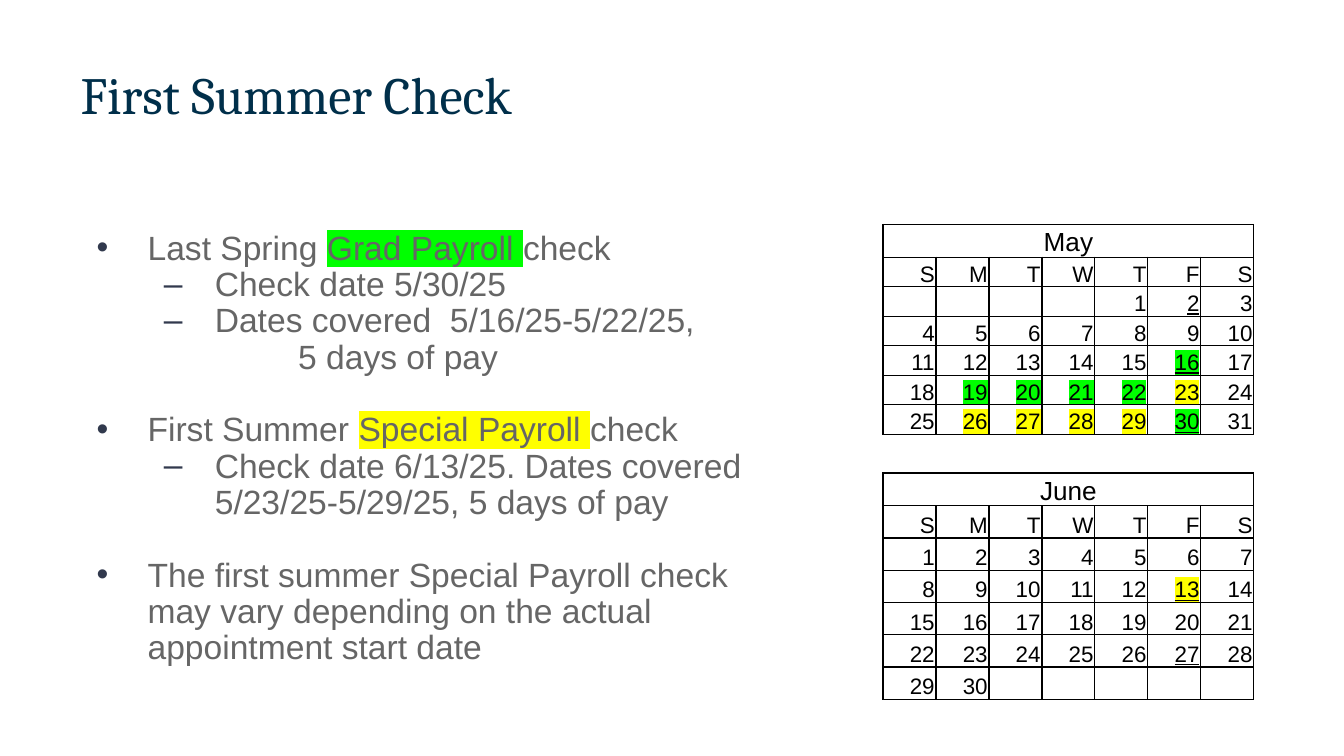
import pptx
import pptx.util
import pptx.dml.color
import pptx.enum.text
import pptx.oxml
import pptx.oxml.ns
from lxml import etree

Inches, Pt = pptx.util.Inches, pptx.util.Pt
RGB = pptx.dml.color.RGBColor
ALIGN = pptx.enum.text.PP_ALIGN
ANCHOR = pptx.enum.text.MSO_ANCHOR

NAVY = RGB(0x00, 0x2F, 0x4A)
SLATE = RGB(0x31, 0x39, 0x4D)
GRAY = RGB(0x66, 0x66, 0x66)
BLACK = RGB(0, 0, 0)
GREEN = RGB(0, 0xFF, 0)
YELLOW = RGB(0xFF, 0xFF, 0)

TITLE = "First Summer Check"

# Level, space before in points, runs of (text, highlight)
POINTS = [
    ("top", 4, [("Last Spring ", None), ("Grad Payroll ", GREEN), ("check", None)]),
    ("sub", 0, [("Check date 5/30/25", None)]),
    ("sub", 0, [("Dates covered  5/16/25-5/22/25,", None)]),
    ("more", 0, [("5 days of pay", None)]),
    ("top", 19.5, [("First Summer ", None), ("Special Payroll ", YELLOW), ("check", None)]),
    ("sub", 0, [("Check date 6/13/25. Dates covered 5/23/25-5/29/25, 5 days of pay", None)]),
    ("top", 19.5, [("The first summer Special Payroll check may vary depending on "
                    "the actual appointment start date", None)]),
]
# Left margin, hanging indent, bullet
LEVELS = {"top": (0.5, -0.38, "•"), "sub": (1, -0.38, "–"), "more": (1.62, 0, None)}

DAYS = "SMTWTFS"
MONTHS = [
    {"name": "May", "start": 4, "days": 31, "top": 1.67, "row": 0.22,
     "marks": {16: GREEN, 19: GREEN, 20: GREEN, 21: GREEN, 22: GREEN, 30: GREEN,
               23: YELLOW, 26: YELLOW, 27: YELLOW, 28: YELLOW, 29: YELLOW},
     "lines": {2, 16, 30}},
    {"name": "June", "start": 0, "days": 30, "top": 3.52, "row": 0.24,
     "marks": {13: YELLOW}, "lines": {13, 27}},
]
WEEKS = 5
LEFT, WIDTH = 6.57, 2.76


def add(parent, tag, **attrs):
    return etree.SubElement(parent, pptx.oxml.ns.qn(tag), **attrs)


def write(para, text, size=12, color=BLACK, face="Arial", mark=None, line=False):
    run = para.add_run()
    run.text = text
    font = run.font
    font.size = Pt(size)
    font.color.rgb = color
    if mark is not None:
        add(add(run._r.get_or_add_rPr(), "a:highlight"), "a:srgbClr", val=str(mark))
    font.name = face
    if line:
        font.underline = True


def indent(para, left, hang, bullet):
    props = para._p.get_or_add_pPr()
    props.set("marL", str(Inches(left)))
    props.set("indent", str(Inches(hang)))
    if bullet:
        add(add(props, "a:buClr"), "a:srgbClr", val=str(SLATE))
        add(props, "a:buFont", typeface="Arial")
        add(props, "a:buChar", char=bullet)


def style(cell):
    """Set thin black borders, no fill and tight margins."""
    props = cell._tc.get_or_add_tcPr()
    for side in ("a:lnL", "a:lnR", "a:lnT", "a:lnB"):
        edge = add(props, side, w=str(Pt(0.75)))
        add(add(edge, "a:solidFill"), "a:srgbClr", val=str(BLACK))
    cell.fill.background()
    cell.margin_left = cell.margin_right = cell.margin_top = Inches(0.01)
    cell.margin_bottom = 0
    cell.vertical_anchor = ANCHOR.BOTTOM


def draw_month(slide, month):
    cols, rows = len(DAYS), WEEKS + 2
    frame = slide.shapes.add_table(rows, cols, Inches(LEFT), Inches(month["top"]),
                                   Inches(WIDTH), Inches(month["row"] * rows))
    table = frame.table
    table.first_row = table.horz_banding = False
    for row in table.rows:
        row.height = Inches(month["row"])
        for cell in row.cells:
            style(cell)
            end = cell.text_frame.paragraphs[0]._p.get_or_add_endParaRPr()
            end.set("sz", "1200")

    head = table.cell(0, 0)
    head.merge(table.cell(0, cols - 1))
    para = head.text_frame.paragraphs[0]
    para.alignment = ALIGN.CENTER
    write(para, month["name"], size=14)

    for col, name in enumerate(DAYS):
        para = table.cell(1, col).text_frame.paragraphs[0]
        para.alignment = ALIGN.RIGHT
        write(para, name)
    for day in range(1, month["days"] + 1):
        week, col = divmod(month["start"] + day - 1, cols)
        para = table.cell(week + 2, col).text_frame.paragraphs[0]
        para.alignment = ALIGN.RIGHT
        write(para, str(day), mark=month["marks"].get(day), line=day in month["lines"])


def main():
    deck = pptx.Presentation()
    deck.slide_width = Inches(10)
    deck.slide_height = deck.slide_width * 9 // 16
    slide = deck.slides.add_slide(deck.slide_layouts[5])

    title = slide.shapes.title
    title.left, title.top = Inches(0.5), Inches(0.23)
    title.width, title.height = Inches(9), Inches(0.94)
    title.text_frame.vertical_anchor = ANCHOR.MIDDLE
    para = title.text_frame.paragraphs[0]
    para.alignment = ALIGN.LEFT
    write(para, TITLE, size=28, color=NAVY, face="Cambria")

    body = slide.shapes.add_textbox(Inches(0.5), Inches(1.67), Inches(5.31), Inches(3.72))
    text = body.text_frame
    text.word_wrap = True
    for num, (level, gap, runs) in enumerate(POINTS):
        para = text.add_paragraph() if num else text.paragraphs[0]
        para.line_spacing = 0.9
        para.space_before = Pt(gap)
        indent(para, *LEVELS[level])
        for words, mark in runs:
            write(para, words, size=18, color=GRAY, mark=mark)

    for month in MONTHS:
        draw_month(slide, month)
    deck.save("out.pptx")


if __name__ == "__main__":
    main()
